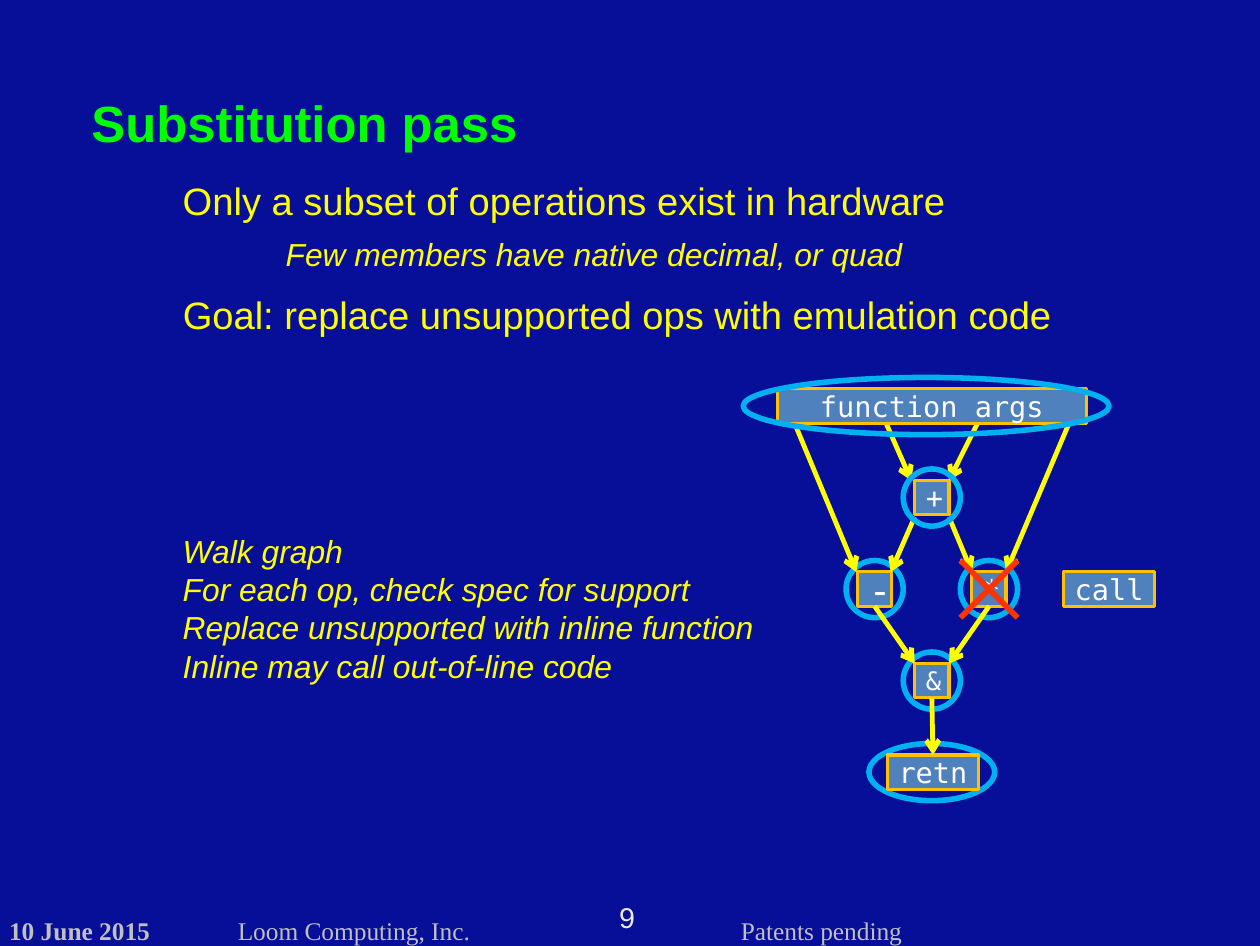
from dataclasses import dataclass

from lxml.etree import SubElement
from pptx import Presentation
from pptx.dml.color import RGBColor as RGB
from pptx.enum.shapes import MSO_CONNECTOR as CONNECTOR, MSO_SHAPE as SHAPE
from pptx.enum.text import MSO_ANCHOR as ANCHOR, MSO_AUTO_SIZE as FIT, PP_ALIGN as ALIGN
from pptx.oxml.ns import qn
from pptx.util import Inches, Pt


@dataclass(frozen=True)
class Theme:
    background: str = "070E97"
    title: str = "00FF00"
    body: str = "FFFF00"
    footer: str = "C0C0C0"
    page_number: str = "EEECE1"
    node: str = "4F81BD"
    node_edge: str = "FFC000"
    node_text: str = "FFFFFF"
    ring: str = "00B0F0"
    arrow: str = "FFFF00"
    cross: str = "FF3300"
    sans: str = "Arial"
    serif: str = "Times New Roman"
    mono: str = "DejaVu Sans Mono"
    title_size: int = 32
    point_size: int = 24
    detail_size: int = 20
    node_size: int = 18
    footer_size: int = 16


def write_text(frame, text, *, font, size, color, bold=False, italic=False, align=ALIGN.LEFT):
    """Fill a text frame, one paragraph per line of text."""
    frame.text = text
    for paragraph in frame.paragraphs:
        paragraph.alignment = align
        style = paragraph.font
        style.name, style.size = font, Pt(size)
        style.bold, style.italic = bold, italic
        style.color.rgb = RGB.from_string(color)


class SlideBuilder:
    def __init__(self, slide, theme):
        self.slide, self.theme = slide, theme
        fill = slide.background.fill
        fill.solid()
        fill.fore_color.rgb = RGB.from_string(theme.background)

    def text(self, text, left, top, width, height, *, inset=True, wrap=False, **style):
        box = self.slide.shapes.add_textbox(*map(Inches, (left, top, width, height)))
        frame = box.text_frame
        frame.word_wrap = wrap
        frame.auto_size = FIT.SHAPE_TO_FIT_TEXT
        if not inset:
            frame.margin_left = frame.margin_right = 0
            frame.margin_top = frame.margin_bottom = 0
        write_text(frame, text, **style)

    def outlined(self, kind, left, top, width, height, color, weight):
        shape = self.slide.shapes.add_shape(kind, *map(Inches, (left, top, width, height)))
        shape.shadow.inherit = False
        shape.line.color.rgb = RGB.from_string(color)
        shape.line.width = Pt(weight)
        return shape

    def node(self, label, left, top, width=0.3, size=None):
        theme = self.theme
        box = self.outlined(SHAPE.RECTANGLE, left, top, width, 0.3, theme.node_edge, 2)
        box.fill.solid()
        box.fill.fore_color.rgb = RGB.from_string(theme.node)
        box.text_frame.word_wrap = True
        box.text_frame.vertical_anchor = ANCHOR.MIDDLE
        write_text(box.text_frame, label, font=theme.mono, size=size or theme.node_size,
                   color=theme.node_text, align=ALIGN.CENTER)
        return box

    def ring(self, left, top, width=0.5):
        ellipse = self.outlined(SHAPE.OVAL, left, top, width, 0.5, self.theme.ring, 3.5)
        ellipse.fill.background()

    def line(self, start, end, color, weight):
        line = self.slide.shapes.add_connector(CONNECTOR.STRAIGHT, *map(Inches, (*start, *end)))
        line.line.color.rgb = RGB.from_string(color)
        line.line.width = Pt(weight)
        SubElement(line.element.spPr, qn("a:effectLst"))
        return line

    def arrow(self, start, end, source=None, target=None):
        """Draw an arrow; source joins at its bottom side and target at its top side."""
        arrow = self.line(start, end, self.theme.arrow, 3)
        outline = arrow.element.spPr.find(qn("a:ln"))
        SubElement(outline, qn("a:tailEnd"), type="arrow")
        if source:
            arrow.begin_connect(source, 2)
        if target:
            arrow.end_connect(target, 0)


def add_texts(builder):
    theme = builder.theme
    footer = dict(font=theme.serif, size=theme.footer_size, color=theme.footer, inset=False)
    builder.text("10 June 2015", 0.08, 8, 1.24, 0.25, bold=True, **footer)
    builder.text("Loom Computing, Inc.", 2.08, 8, 2.4, 0.26, wrap=True, **footer)
    builder.text("Patents pending", 6.48, 8, 1.43, 0.26, **footer)
    builder.text("9", 5.33, 7.87, 0.31, 0.29, inset=False, font=theme.sans,
                 size=theme.node_size, color=theme.page_number, align=ALIGN.CENTER)
    builder.text("Substitution pass", 0.8, 0.8, 3.76, 0.52, inset=False, font=theme.sans,
                 size=theme.title_size, color=theme.title, bold=True)

    point = dict(font=theme.sans, size=theme.point_size, color=theme.body)
    detail = dict(font=theme.sans, size=theme.detail_size, color=theme.body, italic=True)
    builder.text("Only a subset of operations exist in hardware", 1.5, 1.5, 6.94, 0.5, **point)
    builder.text("Few members have native decimal, or quad", 2.4, 2, 5.64, 0.44, **detail)
    builder.text("Goal: replace unsupported ops with emulation code", 1.5, 2.5, 8.35, 0.5,
                 wrap=True, **point)
    steps = ("Walk graph", "For each op, check spec for support",
             "Replace unsupported with inline function", "Inline may call out-of-line code")
    builder.text("\n".join(steps), 1.5, 4.6, 5.24, 1.45, **detail)


def add_graph(builder):
    theme = builder.theme
    for left, top, width in ((8.4, 4.9, 0.5), (7.6, 6.5, 1.1), (7.9, 5.7, 0.5), (7.4, 4.9, 0.5)):
        builder.ring(left, top, width)

    times = builder.node("*", 8.5, 5)
    minus = builder.node("-", 7.5, 5, size=theme.point_size)
    both = builder.node("&", 8, 5.8, size=theme.footer_size)
    retn = builder.node("retn", 7.76, 6.6, 0.8)
    builder.node("+", 8, 4.2)

    for start, end in (
        ((7.75, 3.7), (7.97, 4.2)),
        ((8.55, 3.7), (8.3, 4.2)),
        ((9.35, 3.7), (8.8, 5)),
        ((6.95, 3.7), (7.49, 5)),
        ((8.3, 4.52), (8.5, 5)),
        ((8, 4.52), (7.79, 5)),
    ):
        builder.arrow(start, end)
    builder.arrow((7.65, 5.3), (8, 5.8), source=minus)
    builder.arrow((8.65, 5.3), (8.3, 5.8), source=times)
    builder.arrow((8.15, 6.1), (8.16, 6.6), source=both, target=retn)

    builder.node("function args", 6.8, 3.4, 2.7)
    builder.ring(6.5, 3.3, 3.2)
    builder.ring(7.9, 4.1)
    for start_y, end_y in ((4.9, 5.4), (5.4, 4.9)):
        builder.line((8.4, start_y), (8.9, end_y), theme.cross, 3.5)
    builder.node("call", 9.3, 5, 0.8)


def main():
    deck = Presentation()
    deck.slide_width, deck.slide_height = Inches(11.02), Inches(8.27)
    builder = SlideBuilder(deck.slides.add_slide(deck.slide_layouts[6]), Theme())
    add_texts(builder)
    add_graph(builder)
    deck.save("out.pptx")


if __name__ == "__main__":
    main()
